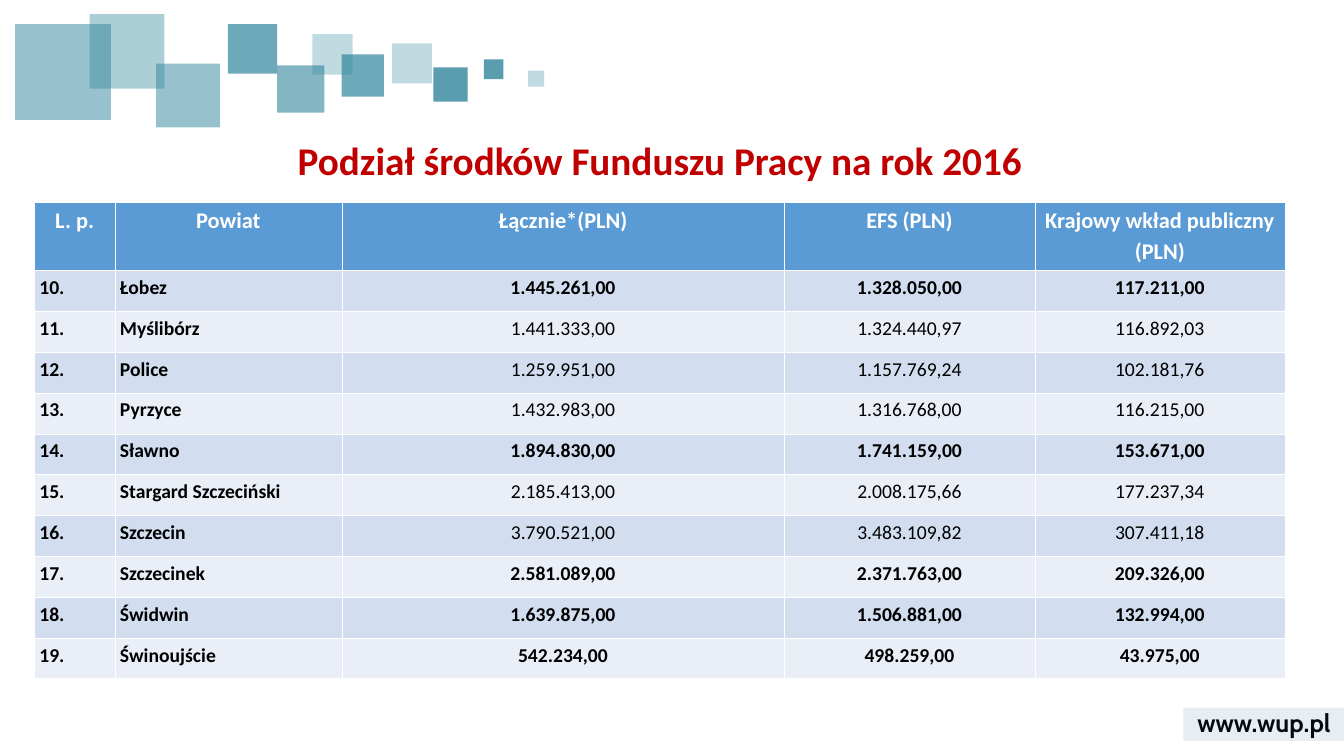
from lxml import etree
from pptx import Presentation
from pptx.dml.color import RGBColor as RGB
from pptx.enum.shapes import MSO_SHAPE as Kind
from pptx.enum.text import MSO_ANCHOR as Anchor, PP_ALIGN as Align
from pptx.oxml.ns import qn
from pptx.util import Pt

# Content
TITLE = "Podział środków Funduszu Pracy na rok 2016"
SITE = "www.wup.pl"
HEAD = ["L. p.", "Powiat", "Łącznie*(PLN)", "EFS (PLN)", "Krajowy wkład publiczny\n(PLN)"]
FIRST = 10  # number of the first row
ROWS = [  # district, total, EFS, national share, bold amounts
    ("Łobez", "1.445.261,00", "1.328.050,00", "117.211,00", True),
    ("Myślibórz", "1.441.333,00", "1.324.440,97", "116.892,03", False),
    ("Police", "1.259.951,00", "1.157.769,24", "102.181,76", False),
    ("Pyrzyce", "1.432.983,00", "1.316.768,00", "116.215,00", False),
    ("Sławno", "1.894.830,00", "1.741.159,00", "153.671,00", True),
    ("Stargard Szczeciński", "2.185.413,00", "2.008.175,66", "177.237,34", False),
    ("Szczecin", "3.790.521,00", "3.483.109,82", "307.411,18", False),
    ("Szczecinek", "2.581.089,00", "2.371.763,00", "209.326,00", True),
    ("Świdwin", "1.639.875,00", "1.506.881,00", "132.994,00", True),
    ("Świnoujście", "542.234,00", "498.259,00", "43.975,00", True),
]
SQUARES = [  # left, top, side, opacity in percent
    (280.1, 31, 28.5, 30), (309.6, 48.2, 24.5, 80), (244.1, 38.9, 30.2, 70),
    (10.8, 17.3, 68.4, 50), (198, 46.8, 33.8, 60), (111.6, 45.4, 45.7, 50),
    (64.1, 10.1, 53.3, 40), (345.6, 42.5, 14, 80), (162.7, 17.3, 35.3, 70),
    (223.2, 24.5, 28.8, 30), (377.3, 50.4, 11.5, 30),
]
COLORS = {
    "teal": "31859C", "navy": "2F5597", "red": "C00000", "black": "000000",
    "white": "FFFFFF", "head": "5B9BD5", "odd": "D2DEEF", "even": "EAEFF7",
}
COLS = [57.6, 162, 316.2, 178.8, 178.8]
HEADROW, ROW, LAST = 49, 29.2, 28.3
LEFT, TOP = 24.5, 144


def color(name):
    return RGB.from_string(COLORS[name])


def style(para, size, tint, bold=True, font="Calibri", align=Align.CENTER):
    para.alignment = align
    para.font.name, para.font.size, para.font.bold = font, Pt(size), bold
    para.font.color.rgb = color(tint)


def block(slide, left, top, width, height, tint, alpha):
    shape = slide.shapes.add_shape(Kind.RECTANGLE, Pt(left), Pt(top), Pt(width), Pt(height))
    shape.shadow.inherit = False
    shape.line.fill.background()
    shape.fill.solid()
    shape.fill.fore_color.rgb = color(tint)
    clr = shape.fill._xPr.find(".//" + qn("a:srgbClr"))
    etree.SubElement(clr, qn("a:alpha"), val=str(alpha * 1000))


def border(cell):
    props = cell._tc.get_or_add_tcPr()
    for spot, side in enumerate(("lnL", "lnR", "lnT", "lnB")):
        line = etree.Element(qn("a:" + side), w=str(Pt(0.06)))
        fill = etree.SubElement(line, qn("a:solidFill"))
        etree.SubElement(fill, qn("a:srgbClr"), val=COLORS["white"])
        props.insert(spot, line)


def fill_cell(cell, text, fill, size, tint, bold, align, side):
    cell.text = text
    cell.margin_left = cell.margin_right = Pt(side)
    cell.margin_top = cell.margin_bottom = Pt(3.6)
    cell.fill.solid()
    cell.fill.fore_color.rgb = color(fill)
    border(cell)
    for n, para in enumerate(cell.text_frame.paragraphs):
        para.line_spacing = 1.14 if n else 1.02
        style(para, size, tint, bold, align=align)


def main():
    deck = Presentation()
    deck.slide_width, deck.slide_height = Pt(960), Pt(540)
    slide = deck.slides.add_slide(deck.slide_layouts[5])

    # Site address under its tinted band
    box = slide.shapes.add_textbox(Pt(845.3), Pt(501.8), Pt(115.2), Pt(28.8))
    frame = box.text_frame
    frame.word_wrap = False
    frame.vertical_anchor = Anchor.MIDDLE
    frame.text = SITE
    style(frame.paragraphs[0], 18, "black", font="Cabin")

    # Decorative squares and band
    for left, top, side, alpha in SQUARES:
        block(slide, left, top, side, side, "teal", alpha)
    block(slide, 845.3, 505.4, 114.7, 23.8, "navy", 11)

    # Title
    title = slide.shapes.title
    title.left, title.top, title.width, title.height = Pt(LEFT), Pt(97.2), Pt(sum(COLS)), Pt(39.6)
    title.text_frame.text = TITLE
    title.text_frame.vertical_anchor = Anchor.TOP
    para = title.text_frame.paragraphs[0]
    para.line_spacing = 0.9
    style(para, 28, "red")

    # Table
    highs = [HEADROW] + [ROW] * (len(ROWS) - 1) + [LAST]
    table = slide.shapes.add_table(len(highs), len(COLS), Pt(LEFT), Pt(TOP),
                                   Pt(sum(COLS)), Pt(sum(highs))).table
    for col, width in zip(table.columns, COLS):
        col.width = Pt(width)
    for row, high in zip(table.rows, highs):
        row.height = Pt(high)
    for c, text in enumerate(HEAD):
        fill_cell(table.cell(0, c), text, "head", 16, "white", True, Align.CENTER, 7.2)
    for r, (*texts, strong) in enumerate(ROWS, 1):
        fill = "odd" if r % 2 else "even"
        for c, text in enumerate([f"{FIRST + r - 1}.", *texts]):
            label = c < 2
            fill_cell(table.cell(r, c), text, fill, 14, "black", label or strong,
                      Align.LEFT if label else Align.CENTER, 3.6)

    deck.save("out.pptx")


if __name__ == "__main__":
    main()
